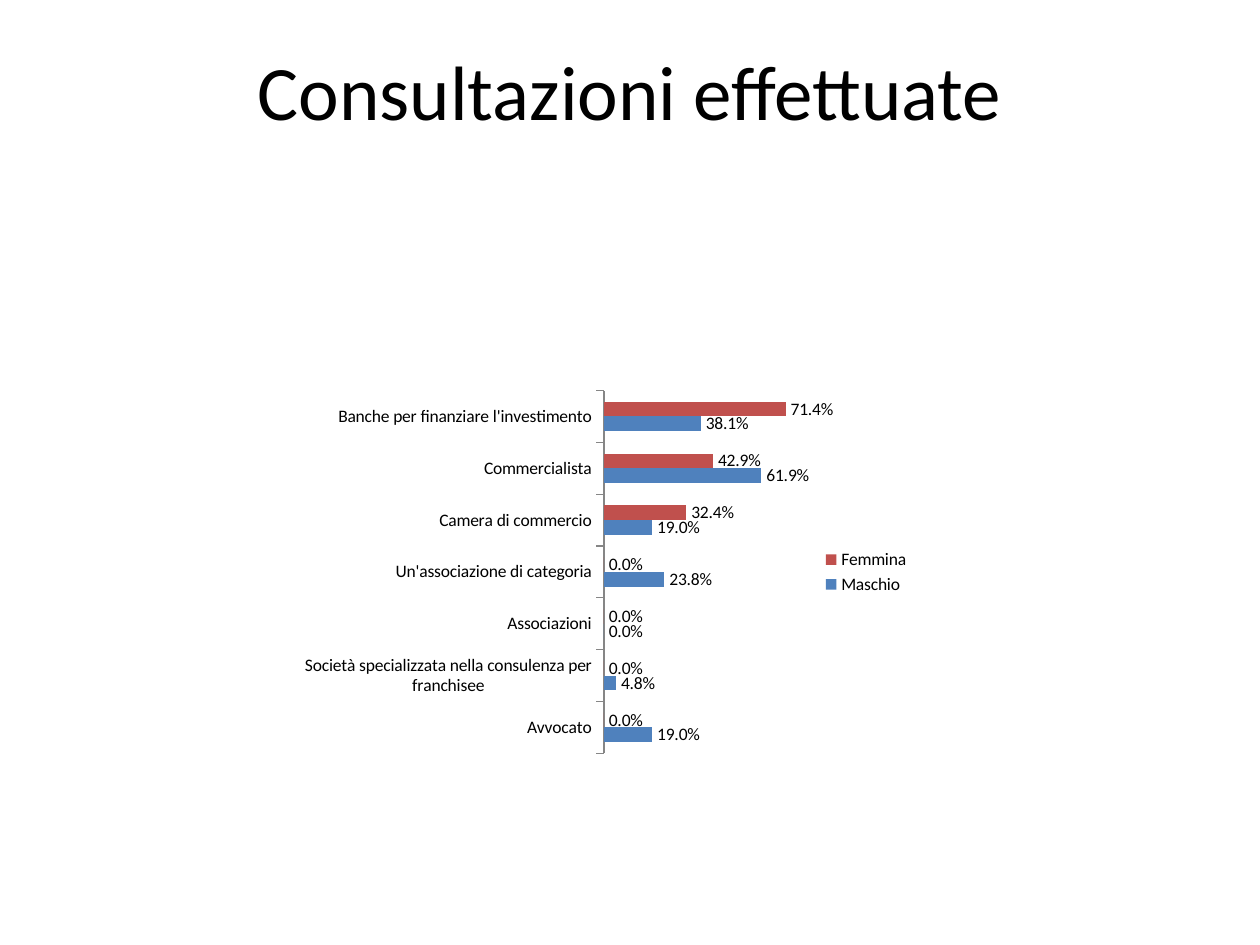
from dataclasses import dataclass

from pptx import Presentation
from pptx.chart.data import CategoryChartData
from pptx.dml.color import RGBColor
from pptx.enum.chart import XL_CHART_TYPE as ChartType
from pptx.enum.chart import XL_LABEL_POSITION as LabelPosition
from pptx.enum.chart import XL_LEGEND_POSITION as LegendPosition
from pptx.enum.chart import XL_TICK_MARK as TickMark
from pptx.enum.text import MSO_ANCHOR, PP_ALIGN
from pptx.slide import Slide
from pptx.text.text import Font
from pptx.util import Inches, Pt

PERCENT = "0.0%"
CATEGORIES = (
    "Avvocato",
    "Società specializzata nella consulenza per franchisee",
    "Associazioni",
    "Un'associazione di categoria",
    "Camera di commercio",
    "Commercialista",
    "Banche per finanziare l'investimento",
)


@dataclass(frozen=True)
class Group:
    name: str
    color: str
    shares: tuple[float, ...]


GROUPS = (
    Group("Maschio", "4F81BD", (0.19, 0.048, 0, 0.238, 0.19, 0.619, 0.381)),
    Group("Femmina", "C0504D", (0, 0, 0, 0, 0.324, 0.429, 0.714)),
)


def rgb(value: str) -> RGBColor:
    return RGBColor.from_string(value)


def style_font(font: Font, size: float) -> None:
    font.name = "Calibri"
    font.size = Pt(size)
    font.color.rgb = rgb("000000")


def add_title(page: Slide, text: str) -> None:
    box = page.shapes.add_textbox(Inches(0.5), Inches(0.3), Inches(9), Inches(1.25))
    frame = box.text_frame
    frame.word_wrap = True
    frame.vertical_anchor = MSO_ANCHOR.TOP
    para = frame.paragraphs[0]
    para.text = text
    para.alignment = PP_ALIGN.CENTER
    style_font(para.font, 44)


def add_consultation_chart(page: Slide) -> None:
    data = CategoryChartData(number_format=PERCENT)
    data.categories = CATEGORIES
    for group in GROUPS:
        data.add_series(group.name, group.shares)
    chart = page.shapes.add_chart(
        ChartType.BAR_CLUSTERED, Inches(2.32), Inches(3.04), Inches(5), Inches(3), data
    ).chart
    style_font(chart.font, 10)
    chart.has_title = False
    chart.has_legend = True
    chart.legend.position = LegendPosition.RIGHT
    chart.legend.include_in_layout = False

    chart.category_axis.major_tick_mark = TickMark.OUTSIDE
    chart.category_axis.format.line.color.rgb = rgb("868686")
    shares_axis = chart.value_axis
    shares_axis.visible = False
    shares_axis.has_major_gridlines = False
    shares_axis.minimum_scale = 0
    shares_axis.maximum_scale = 0.8
    shares_axis.tick_labels.number_format = PERCENT
    shares_axis.tick_labels.number_format_is_linked = False

    plot = chart.plots[0]
    plot.gap_width = 150
    plot.vary_by_categories = False
    for series, group in zip(plot.series, GROUPS):
        series.format.fill.solid()
        series.format.fill.fore_color.rgb = rgb(group.color)
        labels = series.data_labels
        labels.show_value = True
        labels.number_format = PERCENT
        labels.number_format_is_linked = False
        labels.position = LabelPosition.OUTSIDE_END


def main() -> None:
    deck = Presentation()
    deck.slide_width = Inches(10)
    deck.slide_height = Inches(7.5)
    page = deck.slides.add_slide(deck.slide_layouts[6])
    add_consultation_chart(page)
    add_title(page, "Consultazioni effettuate")
    deck.save("out.pptx")


if __name__ == "__main__":
    main()
